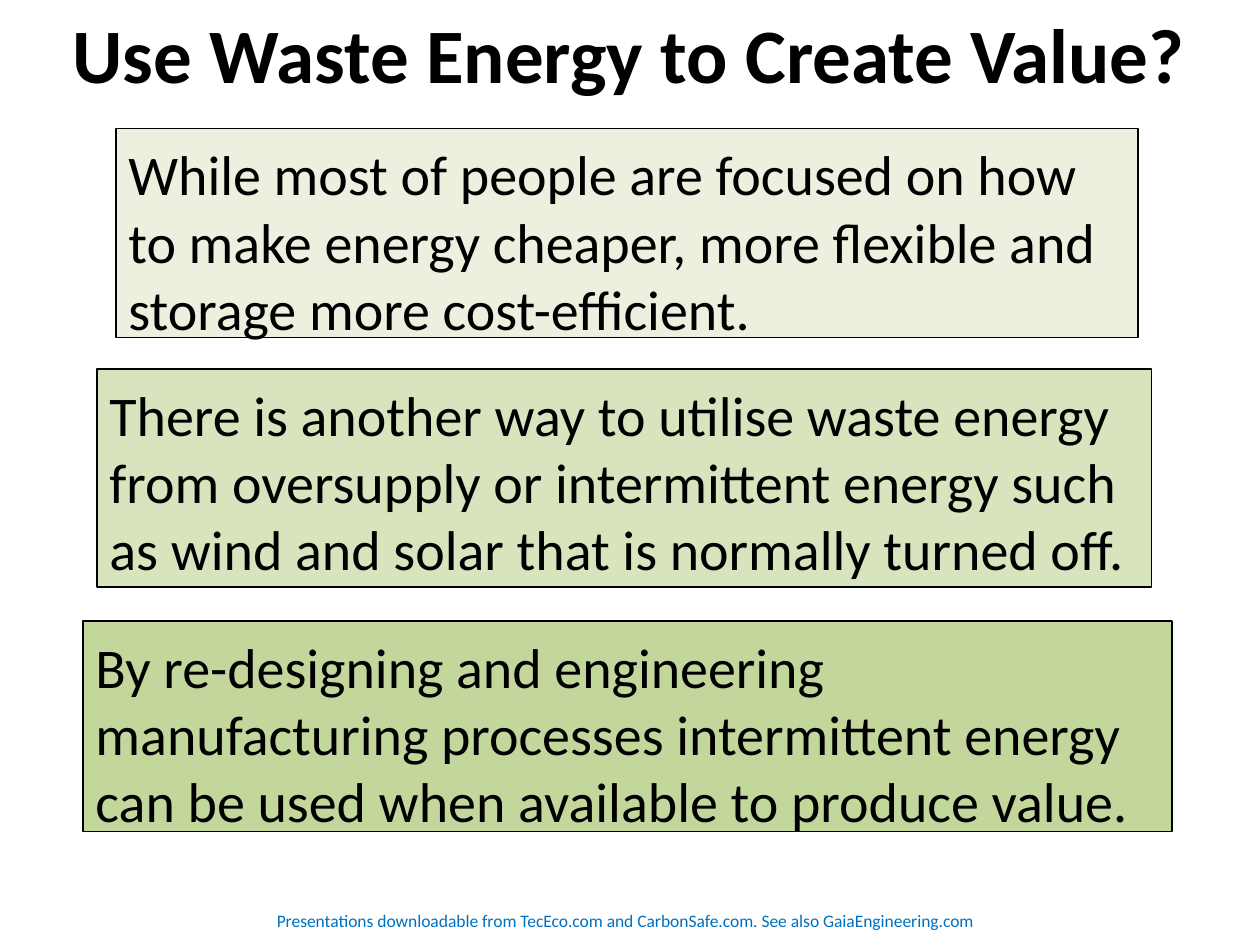
from pptx import Presentation
from pptx import util as u
from pptx.dml import color
from pptx.enum import shapes, text

FONT = "Calibri"
BLACK = "000000"


def rgb(value):
    return color.RGBColor.from_string(value)


class Deck:
    """Holds the presentation style and the current slide."""

    def __init__(self, prs):
        self.prs = prs
        self.s = prs.slides.add_slide(prs.slide_layouts[5])

    def place(self, sp, box):
        sp.left, sp.top, sp.width, sp.height = [u.Inches(v) for v in box]

    def set_text(self, sp, words, size, hue=BLACK, bold=False,
                 align=text.PP_ALIGN.CENTER, anchor=text.MSO_ANCHOR.MIDDLE):
        tf = sp.text_frame
        tf.word_wrap = True
        tf.auto_size = text.MSO_AUTO_SIZE.NONE
        tf.vertical_anchor = anchor
        p = tf.paragraphs[0]
        p.text = words
        p.alignment = align
        p.font.name = FONT
        p.font.size = u.Pt(size)
        p.font.bold = bold
        p.font.color.rgb = rgb(hue)
        return tf

    def title(self, words, box):
        sp = self.s.shapes.title
        self.place(sp, box)
        self.set_text(sp, words, 44, bold=True)

    def panel(self, words, box, fill):
        sp = self.s.shapes.add_shape(shapes.MSO_SHAPE.RECTANGLE,
                                     *[u.Inches(v) for v in box])
        sp.shadow.inherit = False
        sp.fill.solid()
        sp.fill.fore_color.rgb = rgb(fill)
        sp.line.color.rgb = rgb(BLACK)
        sp.line.width = u.Pt(1)
        tf = self.set_text(sp, words, 32, align=text.PP_ALIGN.LEFT,
                           anchor=text.MSO_ANCHOR.TOP)
        tf.margin_top = u.Inches(0.09)

    def footer(self, words, box):
        sp = self.s.shapes.add_textbox(*[u.Inches(v) for v in box])
        self.set_text(sp, words, 10, hue="0070C0")


def main():
    prs = Presentation()
    prs.slide_width, prs.slide_height = u.Inches(10), u.Inches(7.5)
    deck = Deck(prs)

    # Title
    deck.title("Use Waste Energy to Create Value?", (0.43, 0, 9.13, 0.84))

    # Three statements, each wider and darker than the one above
    panels = [
        ("While most of people are focused on how to make energy cheaper, "
         "more flexible and storage more cost-efficient.",
         (0.92, 1.02, 8.11, 1.66), "EBF1DE"),
        ("There is another way to utilise waste energy from oversupply or "
         "intermittent energy such as wind and solar that is normally "
         "turned off.",
         (0.77, 2.93, 8.37, 1.73), "D7E4BD"),
        ("By re-designing and engineering manufacturing processes "
         "intermittent energy can be used when available to produce value.",
         (0.66, 4.93, 8.64, 1.67), "C3D69B"),
    ]
    for words, box, fill in panels:
        deck.panel(words, box, fill)

    # Footer
    deck.footer("Presentations downloadable from TecEco.com and "
                "CarbonSafe.com. See also GaiaEngineering.com",
                (1.85, 7.16, 6.22, 0.29))

    prs.save("out.pptx")


if __name__ == "__main__":
    main()
